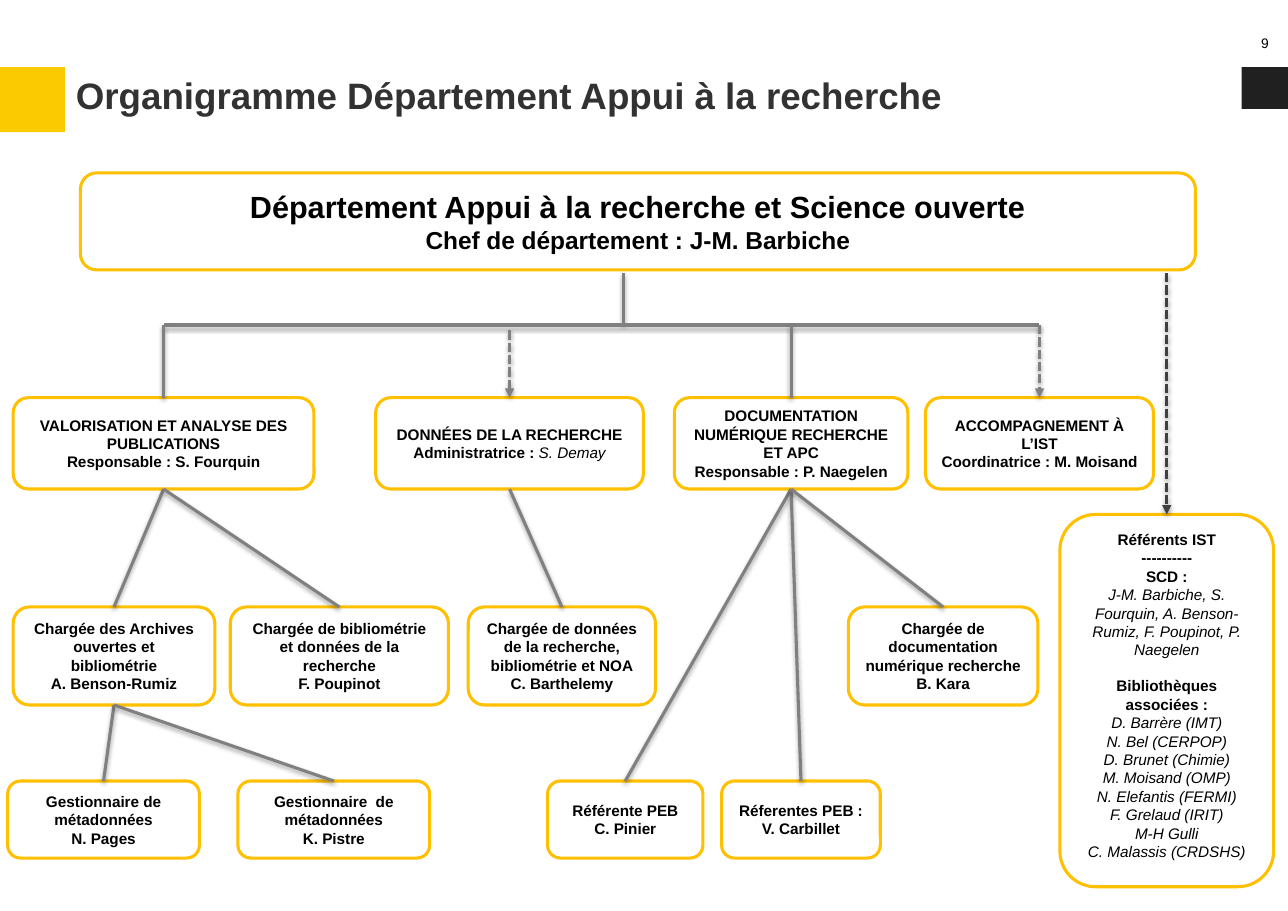
from lxml.etree import SubElement
from pptx import Presentation
from pptx.dml.color import RGBColor
from pptx.enum.dml import MSO_LINE
from pptx.enum.shapes import MSO_CONNECTOR, MSO_SHAPE
from pptx.enum.text import MSO_ANCHOR, PP_ALIGN
from pptx.oxml.ns import qn
from pptx.util import Inches, Pt

YELLOW = RGBColor(0xFB, 0xCA, 0x00)
AMBER = RGBColor(0xFF, 0xC0, 0x00)
WHITE = RGBColor(0xFF, 0xFF, 0xFF)
BLACK = RGBColor(0x00, 0x00, 0x00)
NEAR_BLACK = RGBColor(0x20, 0x20, 0x20)
TITLE_GRAY = RGBColor(0x33, 0x32, 0x33)
GRAY = RGBColor(0x80, 0x80, 0x80)
DARK_GRAY = RGBColor(0x40, 0x40, 0x40)

FONT = "Arial"
TITLE = "Organigramme Département Appui à la recherche"
PAGE_NUMBER = "9"
BOTTOM, TOP = 2, 0

# Rows of boxes: top, height, then (key, left, width, lines)
# A line is a list of (text, style) runs: "b" bold, "i" italic
ROWS = [
    (3.61, 0.83, [
        ("valorisation", 0.12, 2.73, [[("VALORISATION ET ANALYSE DES PUBLICATIONS", "b")],
                                      [("Responsable : S. Fourquin", "b")]]),
        ("données", 3.41, 2.43, [[("DONNÉES DE LA RECHERCHE", "b")],
                                 [("Administratrice : ", "b"), ("S. Demay", "i")]]),
        ("documentation", 6.12, 2.12, [[("DOCUMENTATION NUMÉRIQUE RECHERCHE ET APC", "b")],
                                       [("Responsable : P. Naegelen", "b")]]),
        ("accompagnement", 8.4, 2.07, [[("ACCOMPAGNEMENT À L’IST", "b")],
                                       [("Coordinatrice : M. Moisand", "b")]]),
    ]),
    (5.51, 0.89, [
        ("archives", 0.12, 1.83, [[("Chargée des Archives ouvertes et bibliométrie", "b")],
                                  [("A. Benson-Rumiz", "b")]]),
        ("bibliométrie", 2.09, 1.98, [[("Chargée de bibliométrie et données de la recherche", "b")],
                                      [("F. Poupinot", "b")]]),
        ("dépôt", 4.25, 1.7, [[("Chargée de données de la recherche, bibliométrie et NOA", "b")],
                              [("C. Barthelemy", "b")]]),
        ("numérique", 7.7, 1.72, [[("Chargée de documentation numérique recherche", "b")],
                                  [("B. Kara", "b")]]),
    ]),
    (7.09, 0.7, [
        ("Pages", 0.07, 1.74, [[("Gestionnaire de métadonnées", "b")], [("N. Pages", "b")]]),
        ("Pistre", 2.16, 1.74, [[("Gestionnaire  de métadonnées", "b")], [("K. Pistre", "b")]]),
        ("Pinier", 4.97, 1.41, [[("Référente PEB", "b")], [("C. Pinier", "b")]]),
        ("Carbillet", 6.55, 1.44, [[("Réferentes PEB :", "b")], [("V. Carbillet", "b")]]),
    ]),
]

DEPARTMENT = [[("Département Appui à la recherche et Science ouverte", "b")],
              [("Chef de département : J-M. Barbiche", "b")]]

REFERENTS = [[(text, "b")] for text in ("Référents IST", "----------", "SCD :")]
REFERENTS += [[("J-M. Barbiche, S. Fourquin, A. Benson-Rumiz, F. Poupinot, P. Naegelen", "i")]]
LIBRARIES_LINE = len(REFERENTS)
REFERENTS += [[("Bibliothèques associées :", "b")]]
REFERENTS += [[(text, "i")] for text in (
    "D. Barrère (IMT)", "N. Bel (CERPOP)", "D. Brunet (Chimie)", "M. Moisand (OMP)",
    "N. Elefantis (FERMI)", "F. Grelaud (IRIT)", "M-H Gulli", "C. Malassis (CRDSHS)")]

LINKS = [
    ("valorisation", "archives"), ("valorisation", "bibliométrie"),
    ("archives", "Pages"), ("archives", "Pistre"),
    ("données", "dépôt"),
    ("documentation", "Pinier"), ("documentation", "Carbillet"), ("documentation", "numérique"),
]

BUS_Y = 2.95
TRUNK_X = 5.66
TRUNK_TOP = 2.48
# box reached from straight above, start y, dashed arrow, colour
DROPS = [
    ("valorisation", BUS_Y, False, GRAY),
    ("données", 3, True, GRAY),
    ("documentation", BUS_Y, False, GRAY),
    ("accompagnement", BUS_Y, True, GRAY),
    ("référents", TRUNK_TOP, True, DARK_GRAY),
]


def add_run(paragraph, text, size, color=BLACK, bold=False, italic=False):
    run = paragraph.add_run()
    run.text = text
    run.font.name = FONT
    run.font.size = Pt(size)
    run.font.bold = bold
    run.font.italic = italic
    run.font.color.rgb = color


def add_block(slide, left, width, height, color):
    """Add a plain rectangle of the header band."""
    block = slide.shapes.add_shape(MSO_SHAPE.RECTANGLE, Inches(left), Inches(0.61),
                                   Inches(width), Inches(height))
    block.shadow.inherit = False
    block.fill.solid()
    block.fill.fore_color.rgb = color
    block.line.fill.background()


def add_label(slide, left, top, width, height, text, size, color, alignment, bold=False):
    label = slide.shapes.add_textbox(Inches(left), Inches(top), Inches(width), Inches(height))
    frame = label.text_frame
    frame.word_wrap = True
    frame.vertical_anchor = MSO_ANCHOR.MIDDLE
    paragraph = frame.paragraphs[0]
    paragraph.alignment = alignment
    add_run(paragraph, text, size, color, bold)
    return label


def add_box(slide, left, top, width, height, lines, sizes=(10,), anchor=MSO_ANCHOR.MIDDLE):
    """Add a rounded box; the last size applies to all remaining lines."""
    box = slide.shapes.add_shape(MSO_SHAPE.ROUNDED_RECTANGLE, Inches(left), Inches(top),
                                 Inches(width), Inches(height))
    box.shadow.inherit = False
    box.fill.solid()
    box.fill.fore_color.rgb = WHITE
    box.line.color.rgb = AMBER
    box.line.width = Pt(2)
    frame = box.text_frame
    frame.word_wrap = True
    frame.vertical_anchor = anchor
    for index, runs in enumerate(lines):
        paragraph = frame.paragraphs[0] if index == 0 else frame.add_paragraph()
        paragraph.alignment = PP_ALIGN.CENTER
        size = sizes[min(index, len(sizes) - 1)]
        for text, style in runs:
            add_run(paragraph, text, size, bold=style == "b", italic=style == "i")
    return box


def add_line(slide, x1=0, y1=0, x2=0, y2=0, color=GRAY, arrow=False):
    """Add a line with a soft shadow, dashed when it is an arrow."""
    line = slide.shapes.add_connector(MSO_CONNECTOR.STRAIGHT, x1, y1, x2, y2)
    line.line.color.rgb = color
    line.line.width = Pt(2)
    if arrow:
        line.line.dash_style = MSO_LINE.SQUARE_DOT
        SubElement(line.line._get_or_add_ln(), qn("a:tailEnd"), type="triangle")
    effects = SubElement(line._element.spPr, qn("a:effectLst"))
    shadow = SubElement(effects, qn("a:outerShdw"), blurRad="40000", dist="20000",
                        dir="5400000", rotWithShape="0")
    shadow_color = SubElement(shadow, qn("a:srgbClr"), val="000000")
    SubElement(shadow_color, qn("a:alpha"), val="38000")
    return line


def center_x(box):
    return box.left + box.width // 2


def main():
    presentation = Presentation()
    presentation.slide_width = Inches(11.69)
    presentation.slide_height = Inches(8.27)
    slide = presentation.slides.add_slide(presentation.slide_layouts[6])

    add_block(slide, 11.27, 0.42, 0.38, NEAR_BLACK)
    add_block(slide, 0, 0.59, 0.59, YELLOW)
    add_label(slide, 11.27, 0.17, 0.42, 0.44, PAGE_NUMBER, 9, BLACK, PP_ALIGN.CENTER)
    title = add_label(slide, 0.59, 0.61, 11.09, 0.61, TITLE, 24, TITLE_GRAY, PP_ALIGN.LEFT, True)
    title.text_frame.margin_bottom = Inches(0.15)

    boxes = {}
    for top, height, row in ROWS:
        for key, left, width, lines in row:
            boxes[key] = add_box(slide, left, top, width, height, lines)
    referents = add_box(slide, 9.62, 4.67, 1.94, 3.38, REFERENTS, anchor=MSO_ANCHOR.TOP)
    referents.text_frame.paragraphs[LIBRARIES_LINE].space_before = Pt(11.5)
    boxes["référents"] = referents
    add_box(slide, 0.73, 1.57, 10.12, 0.88, DEPARTMENT, sizes=(20, 16))

    bus_y, trunk_x = Inches(BUS_Y), Inches(TRUNK_X)
    add_line(slide, trunk_x, Inches(TRUNK_TOP), trunk_x, bus_y)
    add_line(slide, center_x(boxes["valorisation"]), bus_y,
             center_x(boxes["accompagnement"]), bus_y)
    for key, start_y, arrow, color in DROPS:
        box = boxes[key]
        x = center_x(box)
        drop = add_line(slide, x, Inches(start_y), x, box.top, color, arrow)
        drop.end_connect(box, TOP)
    for upper, lower in LINKS:
        link = add_line(slide)
        link.begin_connect(boxes[upper], BOTTOM)
        link.end_connect(boxes[lower], TOP)

    presentation.save("out.pptx")


if __name__ == "__main__":
    main()
